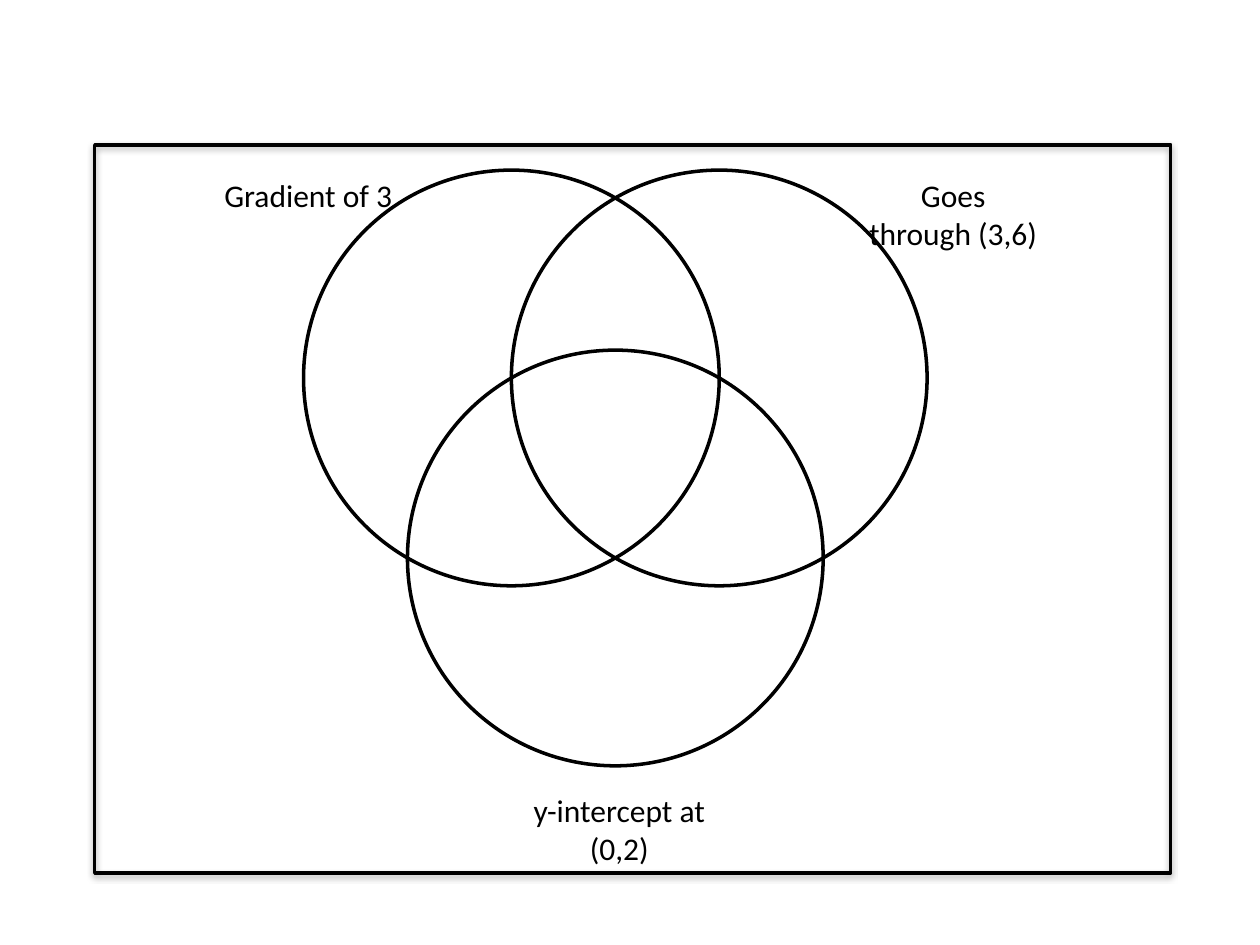
from math import sqrt
from typing import NamedTuple

from lxml import etree
from pptx import Presentation
from pptx.dml.color import RGBColor
from pptx.enum.shapes import MSO_SHAPE
from pptx.enum.text import MSO_AUTO_SIZE, PP_ALIGN
from pptx.oxml.ns import qn
from pptx.util import Cm, Pt

BLACK = RGBColor(0x00, 0x00, 0x00)
OVAL = MSO_SHAPE.OVAL
RECTANGLE = MSO_SHAPE.RECTANGLE
CENTER = PP_ALIGN.CENTER
GROW = MSO_AUTO_SIZE.SHAPE_TO_FIT_TEXT

FONT = "Calibri"
RADIUS = 4.19
VENN_LEFT, VENN_TOP = 6.12, 3.43
LABEL_WIDTH = 3.99


class Box(NamedTuple):
    left: float
    top: float
    width: float
    height: float


class Label(NamedTuple):
    text: str
    left: float
    top: float
    height: float


LABELS = [
    Label("Gradient of 3", 4.22, 3.43, 1.02),
    Label("Goes through (3,6)", 17.22, 3.43, 1.8),
    Label("y-intercept at (0,2)", 10.49, 15.82, 1.8),
]


def add_outline(shapes, kind, box: Box):
    """Draw an unfilled shape with a black outline; lengths in cm."""
    sp = shapes.add_shape(kind, *(Cm(v) for v in box))
    sp.shadow.inherit = False
    sp.fill.background()
    sp.line.color.rgb = BLACK
    sp.line.width = Pt(2)
    return sp


def add_shadow(sp) -> None:
    """Give a shape a soft shadow straight below it."""
    effects = sp._element.spPr.find(qn("a:effectLst"))
    shadow = etree.SubElement(
        effects, qn("a:outerShdw"), blurRad=str(Pt(3.1)), dist=str(Pt(1.8)),
        dir="5400000", rotWithShape="0")
    color = etree.SubElement(shadow, qn("a:srgbClr"), val=str(BLACK))
    etree.SubElement(color, qn("a:alpha"), val="35000")


def add_label(shapes, label: Label) -> None:
    """Write a centred circle label."""
    sp = shapes.add_textbox(Cm(label.left), Cm(label.top),
                            Cm(LABEL_WIDTH), Cm(label.height))
    tf = sp.text_frame
    tf.word_wrap = True
    tf.auto_size = GROW
    tf.text = label.text
    p = tf.paragraphs[0]
    p.alignment = CENTER
    r = p.runs[0]
    r.font.name = FONT
    r.font.size = Pt(18)
    r.font.color.rgb = BLACK


def main() -> None:
    prs = Presentation()
    prs.slide_width, prs.slide_height = Cm(25.4), Cm(19.05)
    slide = prs.slides.add_slide(prs.slide_layouts[6])

    # Three circles, centred on the corners of an equilateral triangle
    venn = slide.shapes.add_group_shape()
    for dx, dy in [(0, 0), (1, 0), (0.5, sqrt(3) / 2)]:
        add_outline(venn.shapes, OVAL,
                    Box(VENN_LEFT + dx * RADIUS, VENN_TOP + dy * RADIUS,
                        2 * RADIUS, 2 * RADIUS))

    # Circle labels
    for label in LABELS:
        add_label(slide.shapes, label)

    # Frame around the diagram
    frame = add_outline(slide.shapes, RECTANGLE, Box(1.91, 2.92, 21.69, 14.68))
    add_shadow(frame)

    prs.save("out.pptx")


if __name__ == "__main__":
    main()
